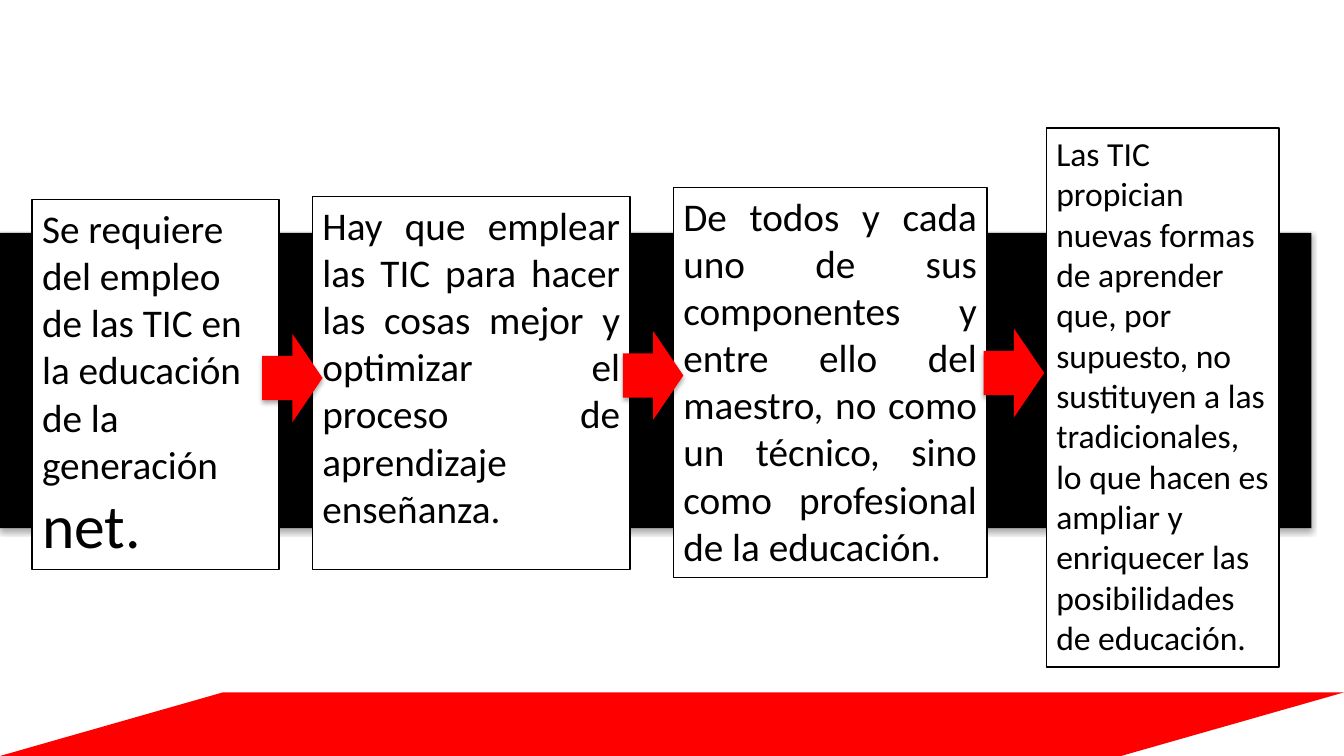
from lxml import etree
from pptx import Presentation
from pptx.dml.color import RGBColor
from pptx.enum import shapes, text
from pptx.oxml import ns
from pptx.util import Pt

BLACK, WHITE, RED = "000000", "FFFFFF", "FF0000"
LEFT, JUSTIFY = text.PP_ALIGN.LEFT, text.PP_ALIGN.JUSTIFY

# Box (left, top, width, height), alignment, runs (wording, size)
STEPS = [
    ((23, 142.6, 176.4, 264.2), LEFT,
     [("Se requiere del empleo de las TIC en la educación de la generación ", 28),
      ("net.", 44)]),
    ((223.2, 140.4, 226.8, 266.4), JUSTIFY,
     [("Hay que emplear las TIC para hacer las cosas mejor y optimizar el "
       "proceso de aprendizaje enseñanza.", 28)]),
    ((481, 133.9, 223.9, 278.6), JUSTIFY,
     [("De todos y cada uno de sus componentes y entre ello del maestro, no "
       "como un técnico, sino como profesional de la educación.", 28)]),
    ((747.4, 91.4, 166.3, 385.2), LEFT,
     [("Las TIC propician nuevas formas de aprender que, por supuesto, no "
       "sustituyen a las tradicionales, lo que hacen es ampliar y enriquecer "
       "las posibilidades de educación.", 24)]),
]


def color(value):
    return RGBColor.from_string(value)


def add_block(slide, preset, box, fill):
    block = slide.shapes.add_shape(preset, *map(Pt, box))
    block.shadow.inherit = False
    block.fill.solid()
    block.fill.fore_color.rgb = color(fill)
    block.line.fill.background()
    return block


def add_soft_shadow(block):
    """Put a faint shadow just below the block."""
    effects = block._element.spPr.find(ns.qn("a:effectLst"))
    shadow = etree.SubElement(effects, ns.qn("a:outerShdw"), blurRad=str(Pt(3.5)),
                              dist=str(Pt(2.2)), dir="5400000", rotWithShape="0")
    tint = etree.SubElement(shadow, ns.qn("a:srgbClr"), val=BLACK)
    etree.SubElement(tint, ns.qn("a:alpha"), val="32000")


def add_band(slide, box):
    add_soft_shadow(add_block(slide, shapes.MSO_SHAPE.RECTANGLE, box, BLACK))


def add_step(slide, box, alignment, runs):
    step = slide.shapes.add_textbox(*map(Pt, box))
    step.fill.solid()
    step.fill.fore_color.rgb = color(WHITE)
    step.line.color.rgb = color(BLACK)
    step.line.width = Pt(1)
    frame = step.text_frame
    frame.word_wrap = True
    frame.auto_size = text.MSO_AUTO_SIZE.NONE
    paragraph = frame.paragraphs[0]
    paragraph.alignment = alignment
    for wording, size in runs:
        run = paragraph.add_run()
        run.text = wording
        run.font.name = "Calibri"
        run.font.size = Pt(size)
        run.font.color.rgb = color(BLACK)


def add_step_arrow(slide, box):
    add_soft_shadow(add_block(slide, shapes.MSO_SHAPE.RIGHT_ARROW, box, RED))


def add_footer(slide, box):
    footer = add_block(slide, shapes.MSO_SHAPE.PARALLELOGRAM, box, RED)
    footer.adjustments[0] = 3.506


def main():
    deck = Presentation()
    deck.slide_width, deck.slide_height = Pt(960), Pt(540)
    slide = deck.slides.add_slide(deck.slide_layouts[6])
    add_band(slide, (0, 166.3, 936.7, 211))
    for box, alignment, runs in STEPS:
        add_step(slide, box, alignment, runs)
    for gap in range(len(STEPS) - 1):
        add_step_arrow(slide, (187.2 + 257.75 * gap, 238.3 - 1.8 * gap, 43.2, 63.4))
    add_footer(slide, (0, 494.6, 960, 45.4))
    deck.save("out.pptx")


if __name__ == "__main__":
    main()
